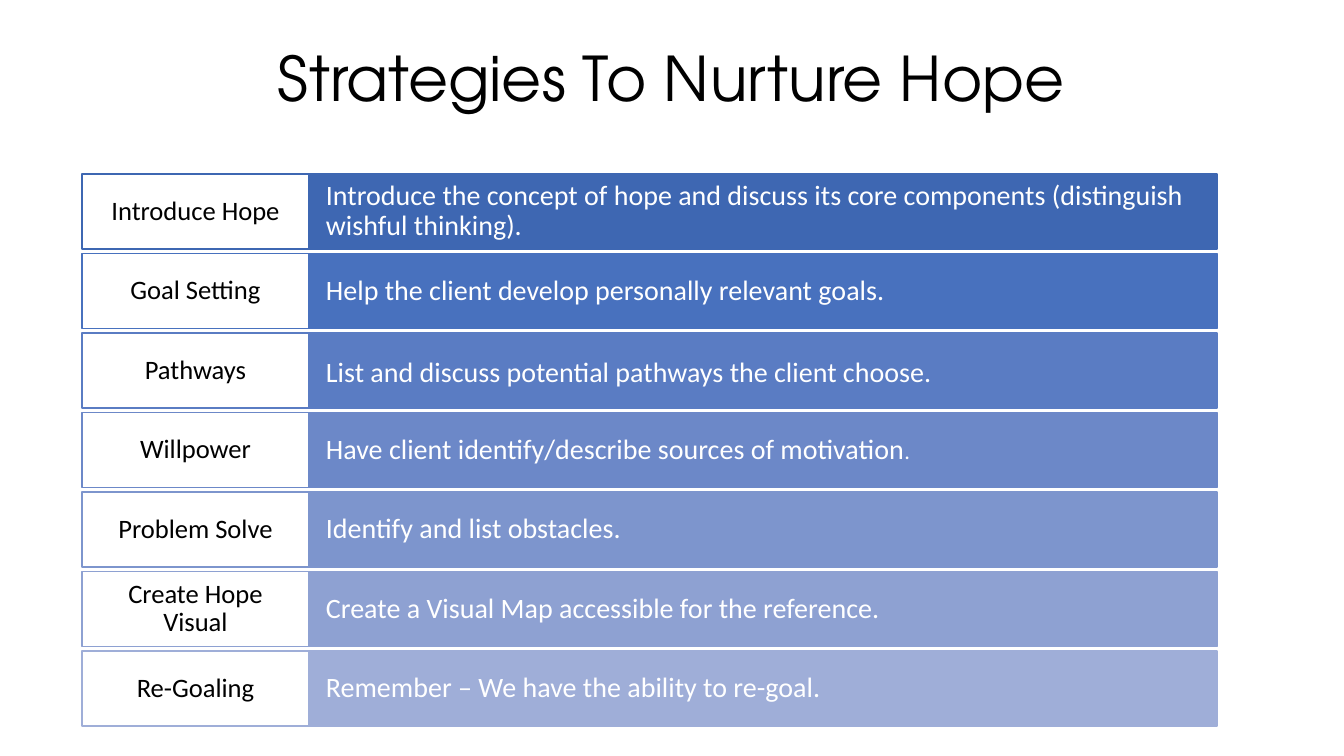
from dataclasses import dataclass

from pptx import Presentation, util as u
from pptx.dml.color import RGBColor
from pptx.enum import shapes, text

PX = 914400 / 100.8


@dataclass(frozen=True)
class Theme:
    title_font: str = "TeX Gyre Adventor"
    body_font: str = "Calibri"
    title_size: int = 44
    text_size: int = 20
    label_size: int = 19
    stop_size: int = 16
    dark: str = "000000"
    light: str = "FFFFFF"
    blues: tuple = ("3E67B2", "4871BE", "5A7CC3", "6C88C8",
                    "7D95CD", "8EA1D2", "9FAED8")


T = Theme()

# label, text runs with their sizes, downward shift of the text in px
STRATEGIES = [
    ("Introduce Hope", [("Introduce the concept of hope and discuss its core components "
                         "(distinguish wishful thinking).", T.text_size)], 0),
    ("Goal Setting", [("Help the client develop personally relevant goals.", T.text_size)], 0),
    ("Pathways", [("List and discuss potential pathways the client choose.", T.text_size)], 3),
    ("Willpower", [("Have client identify/describe sources of motivation", T.text_size),
                   (".", T.stop_size)], 0),
    ("Problem Solve", [("Identify and list obstacles.", T.text_size)], 0),
    ("Create Hope Visual", [("Create a Visual Map accessible for the reference.",
                             T.text_size)], 0),
    ("Re-Goaling", [("Remember – We have the ability to re-goal.", T.text_size)], 0),
]


def px(n):
    return u.Emu(round(n * PX))


def write(sp, runs, font, color, align, pad, shift=0):
    """Fill a shape with one paragraph; shift moves it down from the middle."""
    tf = sp.text_frame
    frame = {"word_wrap": True, "vertical_anchor": text.MSO_ANCHOR.MIDDLE,
             "margin_left": px(pad), "margin_right": px(pad),
             "margin_top": px(7 + 2 * shift), "margin_bottom": px(7)}
    for name, value in frame.items():
        setattr(tf, name, value)
    p = tf.paragraphs[0]
    p.alignment, p.line_spacing = align, 0.9
    for words, size in runs:
        r = p.add_run()
        r.text = words
        r.font.name, r.font.size = font, u.Pt(size)
        r.font.color.rgb = RGBColor.from_string(color)


def add_cell(s, box, fill, line):
    sp = s.shapes.add_shape(shapes.MSO_SHAPE.RECTANGLE, *map(px, box))
    sp.shadow.inherit = False
    sp.fill.solid()
    sp.fill.fore_color.rgb = RGBColor.from_string(fill)
    sp.line.color.rgb = RGBColor.from_string(line)
    sp.line.width = u.Pt(1)
    return sp


def add_title(s, box):
    sp = s.shapes.add_textbox(*map(px, box))
    write(sp, [("Strategies To Nurture Hope", T.title_size)], T.title_font,
          T.dark, text.PP_ALIGN.CENTER, 10)


def add_strategies(s, box, row_h=75):
    """Spread the rows evenly over the box, labels in its left fifth."""
    x, y, w, h = box
    label_w = w // 5
    pitch = (h - row_h) / (len(STRATEGIES) - 1)
    for i, ((label, runs, shift), blue) in enumerate(zip(STRATEGIES, T.blues)):
        top = y + i * pitch
        sp = add_cell(s, (x + label_w, top, w - label_w, row_h), blue, blue)
        write(sp, runs, T.body_font, T.light, text.PP_ALIGN.LEFT, 17, shift)
        sp = add_cell(s, (x, top, label_w, row_h), T.light, blue)
        write(sp, [(label, T.label_size)], T.body_font, T.dark,
              text.PP_ALIGN.CENTER, 12)


def main():
    prs = Presentation()
    prs.slide_width, prs.slide_height = px(1344), px(756)
    s = prs.slides.add_slide(prs.slide_layouts[6])
    add_title(s, (237, 40, 869, 84))
    add_strategies(s, (82, 174, 1135, 552))
    prs.save("out.pptx")


if __name__ == "__main__":
    main()
